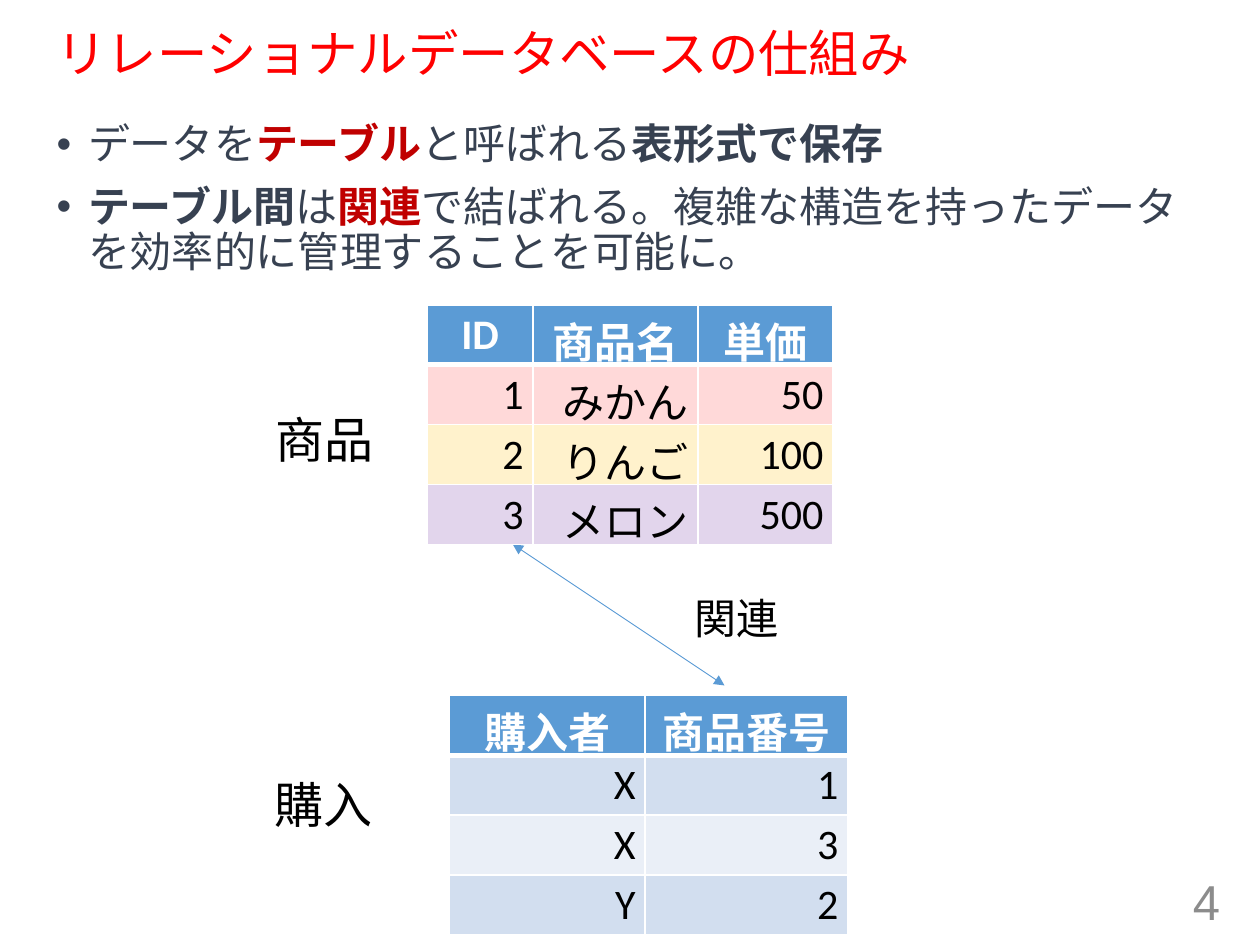
from lxml import etree
from pptx import Presentation
from pptx.dml.color import RGBColor
from pptx.enum.shapes import MSO_CONNECTOR
from pptx.enum.text import MSO_ANCHOR as Anchor, MSO_AUTO_SIZE as AutoSize, PP_ALIGN as Align
from pptx.oxml.ns import qn
from pptx.util import Pt

COLORS = {
    "title": "FF0000", "body": "374151", "accent": "C00000", "number": "8C8C8C",
    "black": "000000", "white": "FFFFFF", "blue": "5B9BD5",
    "red": "FF0000", "gold": "FFC000", "purple": "7030A0",
    "band": "D2DEEF", "pale": "EAEFF7",
}
ROW_HEIGHT = 34.2


def color(name):
    return RGBColor.from_string(COLORS[name])


def add_run(paragraph, text, color_name, **font_format):
    run = paragraph.add_run()
    run.text = text
    run.font.color.rgb = color(color_name)
    for name, value in font_format.items():
        setattr(run.font, name, value)


def add_frame(slide, box, **frame_format):
    frame = slide.shapes.add_textbox(*map(Pt, box)).text_frame
    for name, value in {"word_wrap": True, **frame_format}.items():
        setattr(frame, name, value)
    return frame


def add_label(slide, box, text, color_name, paragraph_format=None, frame_format=None, **font_format):
    paragraph = add_frame(slide, box, **(frame_format or {})).paragraphs[0]
    for name, value in (paragraph_format or {}).items():
        setattr(paragraph, name, value)
    add_run(paragraph, text, color_name, **font_format)


def add_bullets(slide, box, items):
    frame = add_frame(slide, box)
    for index, runs in enumerate(items):
        paragraph = frame.add_paragraph() if index else frame.paragraphs[0]
        paragraph.space_before = Pt(10)
        paragraph.line_spacing = 0.9
        properties = paragraph._p.get_or_add_pPr()
        properties.set("marL", str(Pt(18)))
        properties.set("indent", str(Pt(-18)))
        etree.SubElement(properties, qn("a:buFont"), typeface="Arial")
        etree.SubElement(properties, qn("a:buChar"), char="•")
        for text, color_name, bold in runs:
            add_run(paragraph, text, color_name, size=Pt(24), name="Roboto", bold=bold)


def style_cell(cell, text, fill, alpha, is_header):
    # Text
    cell.margin_left = cell.margin_right = Pt(5.4)
    cell.margin_top = cell.margin_bottom = Pt(2.7)
    paragraph = cell.text_frame.paragraphs[0]
    paragraph.alignment = Align.CENTER if is_header else Align.RIGHT
    add_run(paragraph, text, "white" if is_header else "black",
            size=Pt(24), name="Calibri", bold=is_header)
    # White borders come before the fill in the cell properties
    properties = cell._tc.get_or_add_tcPr()
    for side in ("lnL", "lnR", "lnT", "lnB"):
        width = 3 if is_header and side == "lnB" else 1
        line = etree.SubElement(properties, qn(f"a:{side}"), w=str(Pt(width)))
        line_fill = etree.SubElement(line, qn("a:solidFill"))
        etree.SubElement(line_fill, qn("a:srgbClr"), val=COLORS["white"])
    cell.fill.solid()
    cell.fill.fore_color.rgb = color(fill)
    if alpha < 100:
        fill_color = properties.find(qn("a:solidFill")).find(qn("a:srgbClr"))
        etree.SubElement(fill_color, qn("a:alpha"), val=str(alpha * 1000))


def add_data_table(slide, left, top, widths, rows, fills):
    box = (left, top, sum(widths), ROW_HEIGHT * len(rows))
    table = slide.shapes.add_table(len(rows), len(widths), *map(Pt, box)).table
    for column, width in zip(table.columns, widths):
        column.width = Pt(width)
    for row_index, (row, (fill, alpha)) in enumerate(zip(rows, fills)):
        table.rows[row_index].height = Pt(ROW_HEIGHT)
        for column_index, text in enumerate(row):
            style_cell(table.cell(row_index, column_index), text, fill, alpha, row_index == 0)


def add_relation(slide, start, end):
    connector = slide.shapes.add_connector(MSO_CONNECTOR.STRAIGHT, *map(Pt, start + end))
    connector.line.color.rgb = color("blue")
    connector.line.width = Pt(0.5)
    line = connector.line._get_or_add_ln()
    for arrow_end in ("headEnd", "tailEnd"):
        etree.SubElement(line, qn(f"a:{arrow_end}"), type="triangle")
    etree.SubElement(connector._element.spPr, qn("a:effectLst"))


def build_slide(presentation):
    slide = presentation.slides.add_slide(presentation.slide_layouts[6])

    # Title, bullets and slide number
    add_label(slide, (25.2, 13.7, 666, 36.7), "リレーショナルデータベースの仕組み", "title",
              {"line_spacing": 0.9}, {"vertical_anchor": Anchor.MIDDLE},
              size=Pt(28.8), name="Arial")
    add_bullets(slide, (25.2, 67, 666, 419.8), [
        [("データを", "body", False), ("テーブル", "accent", True),
         ("と呼ばれる", "body", False), ("表形式で保存", "body", True)],
        [("テーブル間", "body", True), ("は", "body", False), ("関連", "accent", True),
         ("で結ばれる。複雑な構造を持ったデータを効率的に管理することを可能に。", "body", False)],
    ])
    add_label(slide, (542.2, 500.4, 162, 28.8), "4", "number",
              {"alignment": Align.RIGHT}, {"vertical_anchor": Anchor.MIDDLE},
              size=Pt(28), name="Arial")

    # Relation between the tables
    add_relation(slide, (293, 311), (414, 391.7))
    add_label(slide, (389.5, 334.8, 63.4, 36), "関連", "black",
              frame_format={"word_wrap": False, "auto_size": AutoSize.SHAPE_TO_FIT_TEXT},
              size=Pt(24), name="Calibri")

    # Product and purchase tables with their names
    for box, text in (((150.5, 230.4, 111.6, 58.3), "商品"),
                      ((149.8, 439.2, 180.7, 58.3), "購入")):
        add_label(slide, box, text, "black", {"space_before": Pt(10)}, size=Pt(28), name="Arial")
    add_data_table(slide, 244.1, 174.2, (60.5, 94.3, 77),
                   [("ID", "商品名", "単価"), ("1", "みかん", "50"),
                    ("2", "りんご", "100"), ("3", "メロン", "500")],
                   [("blue", 100), ("red", 15), ("gold", 20), ("purple", 20)])
    add_data_table(slide, 257, 397.4, (111.6, 115.9),
                   [("購入者", "商品番号"), ("X", "1"), ("X", "3"), ("Y", "2")],
                   [("blue", 100), ("band", 100), ("pale", 100), ("band", 100)])


def main():
    presentation = Presentation()
    presentation.slide_width, presentation.slide_height = Pt(720), Pt(540)
    build_slide(presentation)
    presentation.save("out.pptx")


if __name__ == "__main__":
    main()
